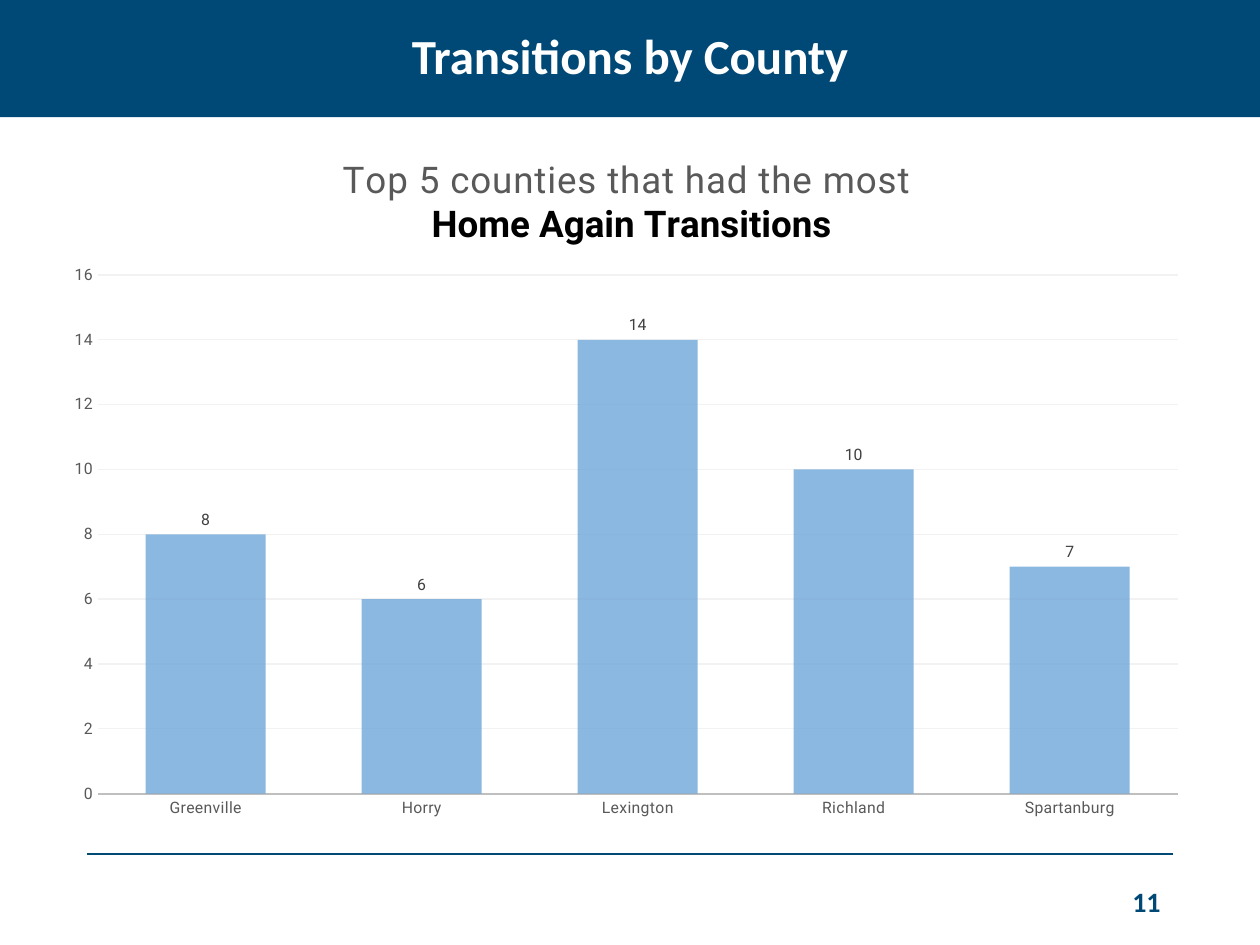
from lxml.etree import SubElement
from pptx import Presentation
from pptx.chart.data import CategoryChartData
from pptx.dml.color import RGBColor
from pptx.enum.chart import XL_CHART_TYPE, XL_LABEL_POSITION, XL_TICK_MARK
from pptx.enum.shapes import MSO_CONNECTOR
from pptx.enum.text import MSO_ANCHOR, PP_ALIGN
from pptx.oxml import parse_xml
from pptx.oxml.ns import nsdecls, qn
from pptx.util import Inches, Pt

NAVY = "004875"


def color(value):
    return RGBColor.from_string(value)


def write(paragraph, text, font="Calibri", size=16, fill=NAVY, bold=False,
          align=None, spacing=None, tracking=None):
    paragraph.alignment = align
    paragraph.line_spacing = spacing
    run = paragraph.add_run()
    run.text = text
    run.font.name = font
    run.font.size = Pt(size)
    run.font.bold = bold
    run.font.color.rgb = color(fill)
    if tracking:
        run.font._element.set("spc", str(tracking))


deck = Presentation()
deck.slide_width, deck.slide_height = Inches(10), Inches(7.5)
slide = deck.slides.add_slide(deck.slide_layouts[5])

footer_rule = slide.shapes.add_connector(
    MSO_CONNECTOR.STRAIGHT, Inches(0.69), Inches(6.78), Inches(9.31), Inches(6.78))
footer_rule.line.color.rgb = color(NAVY)
footer_rule.line.width = Pt(1)
SubElement(footer_rule._element.spPr, qn("a:effectLst"))

heading = slide.shapes.title
heading.left, heading.top = Inches(0), Inches(0)
heading.width, heading.height = Inches(10), Inches(0.93)
heading.fill.solid()
heading.fill.fore_color.rgb = color(NAVY)
heading.text_frame.vertical_anchor = MSO_ANCHOR.MIDDLE
write(heading.text_frame.paragraphs[0], "Transitions by County", size=28,
      fill="FFFFFF", bold=True, align=PP_ALIGN.CENTER, spacing=0.9)

page_number = slide.shapes.add_textbox(
    Inches(7.06), Inches(6.95), Inches(2.25), Inches(0.4)).text_frame
page_number.word_wrap = True
page_number.vertical_anchor = MSO_ANCHOR.MIDDLE
write(page_number.paragraphs[0], "11", bold=True, align=PP_ALIGN.RIGHT)

counties = CategoryChartData()
counties.categories = ["Greenville", "Horry", "Lexington", "Richland", "Spartanburg"]
counties.add_series("Series 1", [8, 6, 14, 10, 7])
chart = slide.shapes.add_chart(
    XL_CHART_TYPE.COLUMN_CLUSTERED, Inches(0.41), Inches(1.05),
    Inches(9.12), Inches(5.55), counties).chart
chart.has_legend = False
chart.font.name = "Roboto"
chart.font.size = Pt(10)
chart.font.color.rgb = color("000000")

chart.has_title = True
chart_title = chart.chart_title.text_frame
write(chart_title.paragraphs[0], "Top 5 counties that had the most ", font="Roboto",
      size=21, fill="595959", align=PP_ALIGN.CENTER, tracking=50)
write(chart_title.add_paragraph(), "Home Again Transitions", font="Roboto",
      size=21, fill="000000", bold=True, align=PP_ALIGN.CENTER)

title_place = {"xMode": "edge", "yMode": "edge", "x": 0.25, "y": 0.03}
plot_place = {"layoutTarget": "inner", "xMode": "edge", "yMode": "edge",
              "x": 0.04, "y": 0.204, "w": 0.94, "h": 0.742}
plot_area = chart._chartSpace.chart.plotArea
for parent, place in ((chart.chart_title._element, title_place), (plot_area, plot_place)):
    for old_layout in parent.findall(qn("c:layout")):
        parent.remove(old_layout)
    settings = "".join(f'<c:{key} val="{value}"/>' for key, value in place.items())
    layout = parse_xml(f'<c:layout {nsdecls("c")}><c:manualLayout>{settings}'
                       '</c:manualLayout></c:layout>')
    parent.insert(1 if parent.find(qn("c:tx")) is not None else 0, layout)

county_axis, count_axis = chart.category_axis, chart.value_axis
for axis in (county_axis, count_axis):
    axis.major_tick_mark = axis.minor_tick_mark = XL_TICK_MARK.NONE
    labels_font = axis.tick_labels.font
    labels_font.name = "Roboto"
    labels_font.size = Pt(9)
    labels_font.color.rgb = color("595959")
    labels_font._element.set("spc", "20")
county_axis.format.line.color.rgb = color("BFBFBF")
county_axis.format.line.width = Pt(1.25)
count_axis.format.line.fill.background()
count_axis.minimum_scale, count_axis.maximum_scale, count_axis.major_unit = 0, 16, 2
count_axis.major_gridlines.format.line.color.rgb = color("F2F2F2")
count_axis.major_gridlines.format.line.width = Pt(0.75)

columns = chart.plots[0]
columns.gap_width, columns.overlap = 80, 25
columns.vary_by_categories = False
transitions = columns.series[0]
transitions.format.fill.solid()
transitions.format.fill.fore_color.rgb = color("5B9BD5")
bar_color = transitions._element.find(".//" + qn("a:srgbClr"))
SubElement(bar_color, qn("a:alpha")).set("val", "70000")
counts = transitions.data_labels
counts.show_value = True
counts.position = XL_LABEL_POSITION.OUTSIDE_END
counts.font.name = "Roboto"
counts.font.size = Pt(9)
counts.font.color.rgb = color("404040")

deck.save("out.pptx")
